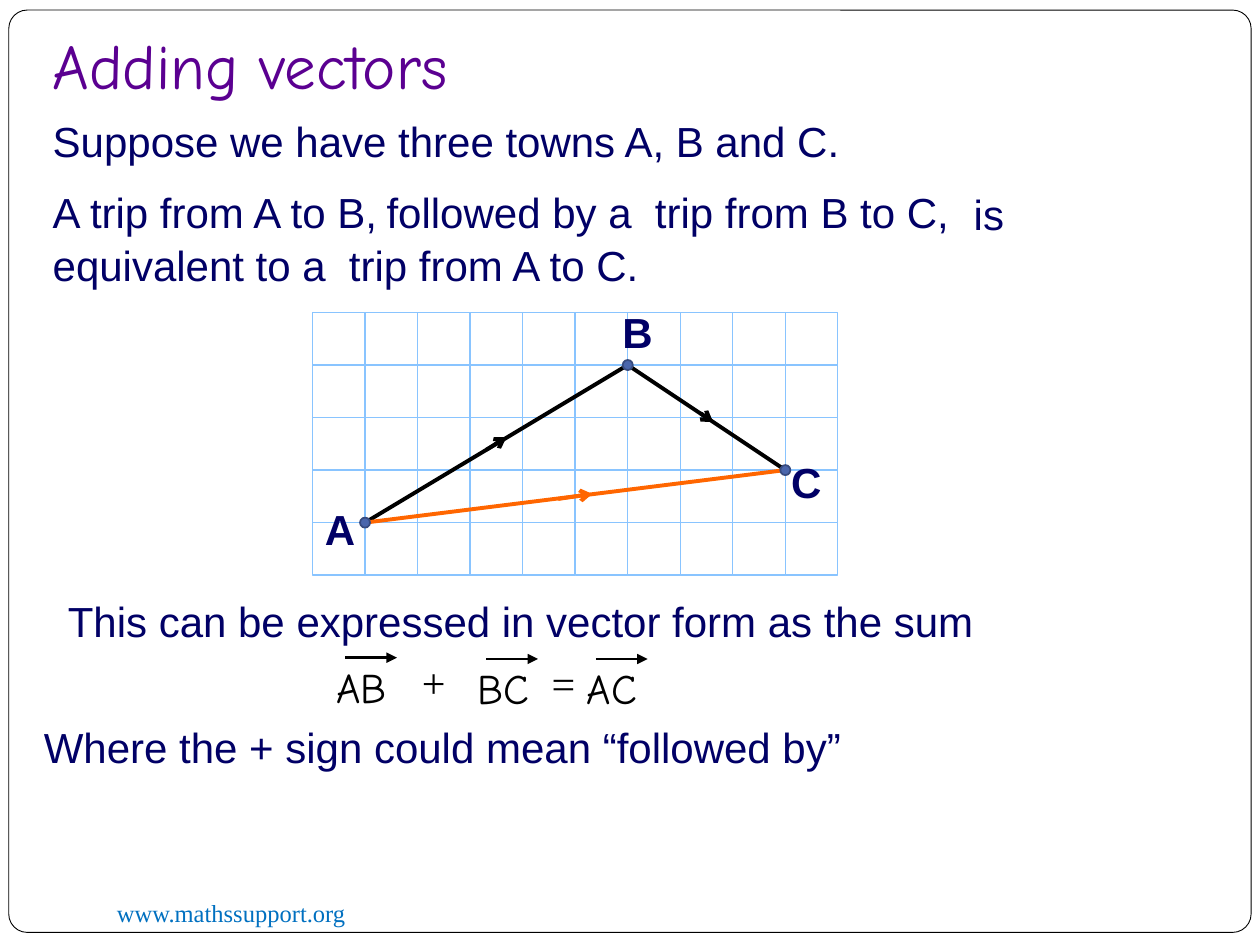
"""Build the slide on adding vectors with three towns on a grid."""
from dataclasses import dataclass
from typing import NamedTuple

from lxml import etree
from pptx import Presentation
from pptx import util as u
from pptx.dml.color import RGBColor
from pptx.enum import shapes, text
from pptx.oxml.ns import qn


@dataclass(frozen=True)
class Theme:
    """Colours, fonts and type sizes."""
    ink: str = "010066"
    head: str = "5B0091"
    link: str = "0070C0"
    black: str = "000000"
    white: str = "FFFFFF"
    grid: str = "89C4FF"
    sum: str = "FF6600"
    dot: str = "4A66AC"
    rim: str = "374B7F"
    sans: str = "Arial"
    hand: str = "Comic Neue"
    serif: str = "Times New Roman"
    body: int = 24
    title: int = 36
    small: int = 14


T = Theme()


class Box(NamedTuple):
    """A rectangle in inches."""
    x: float
    y: float
    w: float
    h: float


@dataclass(frozen=True)
class Label:
    """A piece of text and its format."""
    words: str
    box: Box
    font: str = T.sans
    color: str = T.ink
    size: int = T.body
    bold: bool = False
    wrap: bool = True
    indent: float = 0
    low: bool = False


class Stroke(NamedTuple):
    """A straight line in inches."""
    start: tuple[float, float]
    end: tuple[float, float]
    color: str = T.black
    width: float = 2.25
    tip: str = ""


CELL = 0.417
LEFT, TOP, COLS, ROWS = 2.48, 2.48, 10, 5
DOT = 0.08


def node(col: int, row: int) -> tuple[float, float]:
    """Return the place of a grid crossing."""
    return LEFT + col * CELL, TOP + row * CELL


A, B, C = node(1, 4), node(6, 1), node(9, 3)

LINES = [
    Label("www.mathssupport.org", Box(0.83, 7.08, 3.25, 0.34), T.serif, T.link, T.small),
    Label("Adding vectors", Box(0.32, 0.24, 8.5, 0.67), T.hand, T.head, T.title, low=True),
    Label("Suppose we have three towns A, B and C.", Box(0.32, 0.87, 9.52, 0.5)),
    Label("A trip from A to B,", Box(0.32, 1.43, 2.83, 0.5)),
    Label("followed by a  trip from B to C,", Box(2.97, 1.43, 4.96, 0.5)),
    Label("is equivalent to a  trip from A to C.", Box(0.32, 1.45, 9.2, 0.91), indent=7.31),
    Label("This can be expressed in vector form as the sum", Box(0.44, 4.68, 9.27, 0.5)),
    Label("Where the + sign could mean “followed by”", Box(0.25, 5.68, 9.27, 0.5)),
    Label("+", Box(3.25, 5.16, 0.37, 0.5), T.serif, T.black),
    Label("=", Box(4.28, 5.17, 0.37, 0.5), T.serif, T.black),
]
TOWNS = [("A", 2.48, 3.95), ("B", 4.84, 2.38), ("C", 6.18, 3.57)]
TERMS = [("AB", 2.57, 5.2, 0.66), ("BC", 3.69, 5.21, 0.62), ("AC", 4.56, 5.21, 0.65)]
TRIPS = [
    Stroke(A, B),
    Stroke((3.86, 3.57), (4.02, 3.47), tip="arrow"),
    Stroke(B, C),
    Stroke((5.56, 3.28), (5.66, 3.35), tip="arrow"),
    Stroke((4.43, 3.96), (4.7, 3.92), T.sum, tip="arrow"),
    Stroke(A, C, T.sum),
]


def assign(item: object, form: dict[str, object]) -> None:
    """Set attributes from a dict."""
    for key, value in form.items():
        setattr(item, key, value)


def shape(page, kind, box: Box, fill: str, edge: str, width: float):
    """Draw a filled preset shape."""
    item = page.shapes.add_shape(kind, *map(u.Inches, box))
    item.shadow.inherit = False
    item.fill.solid()
    item.fill.fore_color.rgb = RGBColor.from_string(fill)
    item.line.color.rgb = RGBColor.from_string(edge)
    item.line.width = u.Pt(width)
    return item


def write(page, label: Label) -> None:
    """Draw a text box."""
    frame = page.shapes.add_textbox(*map(u.Inches, label.box)).text_frame
    anchor = text.MSO_ANCHOR.BOTTOM if label.low else text.MSO_ANCHOR.TOP
    assign(frame, {"word_wrap": label.wrap, "vertical_anchor": anchor,
                   "margin_bottom": u.Inches(0.1 if label.low else 0.05)})
    para = frame.paragraphs[0]
    if label.indent:
        para._p.get_or_add_pPr().set("indent", str(u.Inches(label.indent)))
    run = para.add_run()
    run.text = label.words
    assign(run.font, {"name": label.font, "size": u.Pt(label.size), "bold": label.bold})
    run.font.color.rgb = RGBColor.from_string(label.color)


def draw(page, stroke: Stroke) -> None:
    """Draw a line, with an arrowhead if it has a tip."""
    ends = map(u.Inches, (*stroke.start, *stroke.end))
    item = page.shapes.add_connector(shapes.MSO_CONNECTOR.STRAIGHT, *ends)
    item.line.color.rgb = RGBColor.from_string(stroke.color)
    item.line.width = u.Pt(stroke.width)
    if stroke.tip:
        etree.SubElement(item.line._get_or_add_ln(), qn("a:tailEnd"), type=stroke.tip)
    etree.SubElement(item._element.spPr, qn("a:effectLst"))


def main() -> None:
    """Build and save the slide."""
    deck = Presentation()
    assign(deck, {"slide_width": u.Inches(10), "slide_height": u.Inches(7.5)})
    page = deck.slides.add_slide(deck.slide_layouts[6])
    kind = shapes.MSO_SHAPE
    frame = shape(page, kind.ROUNDED_RECTANGLE, Box(0.07, 0.08, 9.86, 7.32),
                  T.white, T.black, 0.5)
    frame.adjustments[0] = 0.02
    for row in range(ROWS):
        for col in range(COLS):
            shape(page, kind.RECTANGLE, Box(*node(col, row), CELL, CELL),
                  T.white, T.grid, 0.75)
    for trip in TRIPS:
        draw(page, trip)
    for x, y in (A, B, C):
        shape(page, kind.OVAL, Box(x - DOT / 2, y - DOT / 2, DOT, DOT), T.dot, T.rim, 1)
    for name, x, y in TOWNS:
        write(page, Label(name, Box(x, y, 0.45, 0.51), bold=True, wrap=False))
    for line in LINES:
        write(page, line)
    for name, x, y, w in TERMS:
        write(page, Label(name, Box(x, y, w, 0.5), T.hand, T.black, wrap=False))
        bar = y + 0.02
        draw(page, Stroke((x + 0.17, bar), (x + 0.58, bar), width=1.5, tip="triangle"))
    deck.save("out.pptx")


if __name__ == "__main__":
    main()
